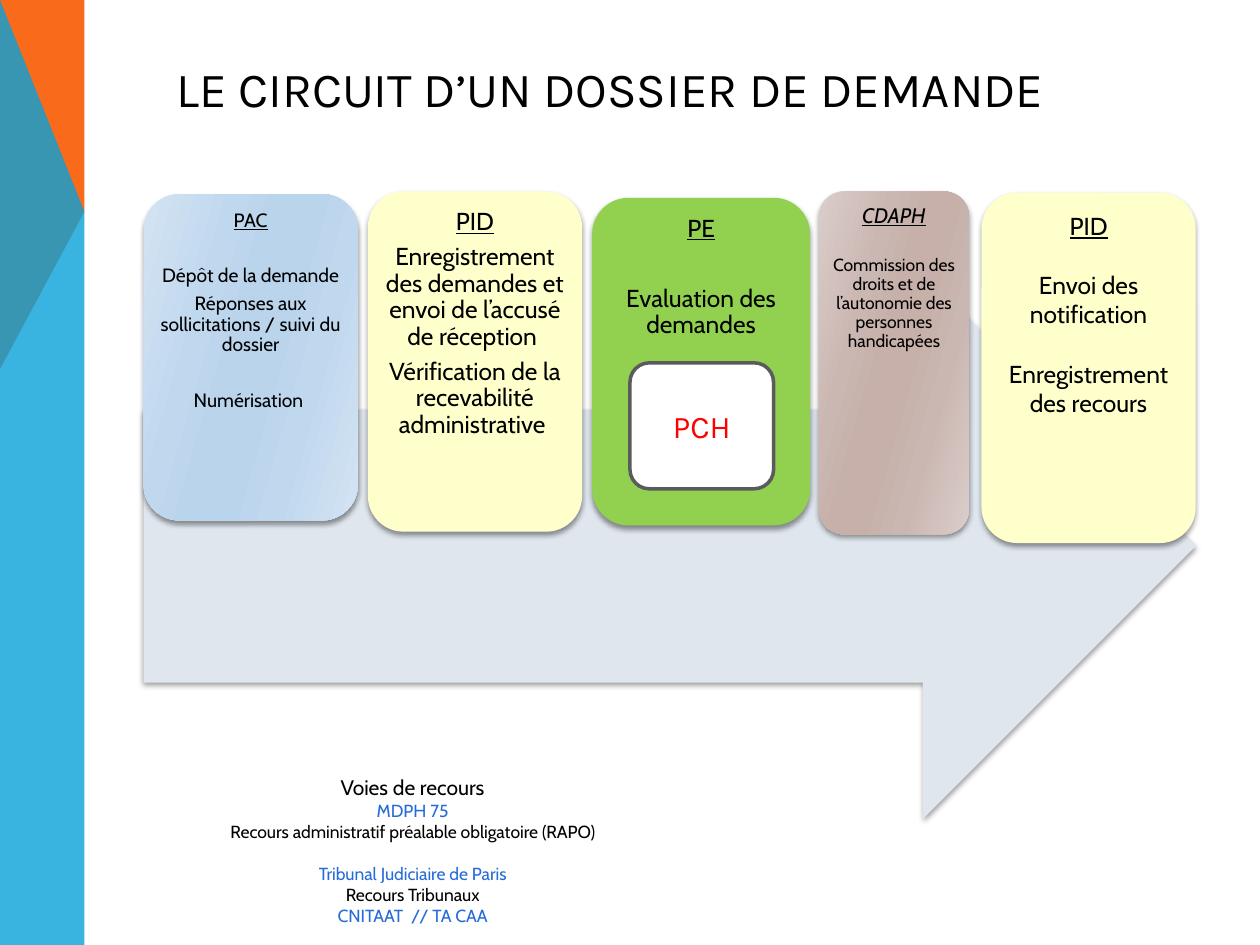
from lxml import etree
from pptx import Presentation
from pptx.dml.color import RGBColor
from pptx.enum.shapes import MSO_SHAPE
from pptx.enum.text import MSO_ANCHOR, PP_ALIGN
from pptx.oxml import parse_xml
from pptx.oxml.ns import nsdecls, qn
from pptx.util import Inches, Pt

ROUND, ARROW = MSO_SHAPE.ROUNDED_RECTANGLE, MSO_SHAPE.RIGHT_ARROW
TOP, MIDDLE = MSO_ANCHOR.TOP, MSO_ANCHOR.MIDDLE
LEFT, CENTER = PP_ALIGN.LEFT, PP_ALIGN.CENTER


class Theme:
    title_font, body_font = "Karla", "Cabin"
    title, badge, step, side, head, small = 28, 18, 14, 11, 12, 10
    black, white, red, link = "000000", "FFFFFF", "FF0000", "266BDA"
    orange, blue = "F96A1B", "08A1D9"
    arrow, yellow, green, grey = "DFE6ED", "FFFFCC", "92D050", "5A5B5D"
    # Gradients run from edge to middle and back
    pale_blue = ("D3E3F2", "C0D8EE", "BAD4EC")
    taupe = ("DACDCA", "CBB7B2", "C6B0A9")


def add_text(p, text, size=Theme.step, color=Theme.black, font=Theme.body_font,
             align=CENTER, underline=False, italic=False, before=0, after=0, spacing=1.0):
    """Put one formatted run in paragraph p."""
    p.alignment, p.line_spacing = align, spacing
    p.space_before, p.space_after = Pt(before), Pt(after)
    r = p.add_run()
    r.text = text
    r.font.name, r.font.size = font, Pt(size)
    r.font.color.rgb = RGBColor.from_string(color)
    r.font.underline, r.font.italic, r.font.bold = underline, italic, False


class SlideBuilder:
    def __init__(self, prs, theme):
        self.theme = theme
        self.s = prs.slides.add_slide(prs.slide_layouts[5])

    def title(self, text, x, y, w, h):
        sp = self.s.shapes.title
        sp.left, sp.top, sp.width, sp.height = map(Inches, (x, y, w, h))
        sp.text_frame.vertical_anchor = MIDDLE
        add_text(sp.text_frame.paragraphs[0], text, size=self.theme.title,
                 font=self.theme.title_font, align=LEFT)

    def polygon(self, points, color, alpha=100):
        points = [(Inches(x), Inches(y)) for x, y in points]
        fb = self.s.shapes.build_freeform(*points[0])
        fb.add_line_segments(points[1:], close=True)
        sp = fb.convert_to_shape()
        self.paint(sp, color)
        if alpha < 100:
            clr = sp._element.spPr.find(qn("a:solidFill"))[0]
            etree.SubElement(clr, qn("a:alpha")).set("val", str(alpha * 1000))

    def shape(self, kind, x, y, w, h, fill=None, shadow=False):
        sp = self.s.shapes.add_shape(kind, *map(Inches, (x, y, w, h)))
        self.paint(sp, fill)
        if shadow:
            self.drop_shadow(sp)
        return sp

    def paint(self, sp, fill):
        sp.shadow.inherit = False
        sp.line.fill.background()
        if fill is None:
            sp.fill.background()
        elif isinstance(fill, str):
            sp.fill.solid()
            sp.fill.fore_color.rgb = RGBColor.from_string(fill)
        else:
            self.gradient(sp, fill)

    def gradient(self, sp, colors):
        stops = zip((0, 30, 45, 55, 73, 100), colors + colors[::-1])
        gs = "".join(f'<a:gs pos="{pos * 1000}"><a:srgbClr val="{c}"/></a:gs>'
                     for pos, c in stops)
        xml = (f'<a:gradFill {nsdecls("a")} rotWithShape="1"><a:gsLst>{gs}</a:gsLst>'
               f'<a:lin ang="{16 * 60000}" scaled="0"/></a:gradFill>')
        sp._element.spPr.find(qn("a:prstGeom")).addnext(parse_xml(xml))

    def drop_shadow(self, sp):
        effects = sp._element.spPr.find(qn("a:effectLst"))
        effects.append(parse_xml(
            f'<a:outerShdw {nsdecls("a")} blurRad="{Pt(3)}" dist="{Pt(2)}" '
            f'dir="{90 * 60000}" rotWithShape="0"><a:srgbClr val="{self.theme.black}">'
            '<a:alpha val="40000"/></a:srgbClr></a:outerShdw>'))

    def fill_text(self, sp, lines, anchor=MIDDLE, inset=0.05, bottom=None, **style):
        """Fill sp with (text, format) lines; style applies to all of them."""
        tf = sp.text_frame
        tf.word_wrap, tf.vertical_anchor = True, anchor
        tf.margin_left = tf.margin_right = tf.margin_top = Inches(inset)
        tf.margin_bottom = Inches(inset if bottom is None else bottom)
        for i, (text, fmt) in enumerate(lines):
            p = tf.add_paragraph() if i else tf.paragraphs[0]
            add_text(p, text, **{**style, **fmt})

    def step(self, x, y, w, h, fill, size, lines, spacing=0.9, inset=0.06):
        """One stage of the circuit; the first line is its underlined heading."""
        sp = self.shape(ROUND, x, y, w, h, fill, shadow=True)
        (head, fmt), *rest = lines
        self.fill_text(sp, [(head, {"underline": True, **fmt}), *rest], anchor=TOP,
                       inset=inset, size=size, spacing=spacing,
                       after=size * 0.35 if spacing < 1 else 0)


def main():
    t = Theme
    prs = Presentation()
    prs.slide_width, prs.slide_height = Inches(10), Inches(7.5)
    b = SlideBuilder(prs, t)

    # Side band
    b.polygon([(0, 0), (0.67, 0), (0.67, 1.68), (0, 2.93)], t.orange)
    b.polygon([(0, 0), (0.67, 1.68), (0.67, 7.5), (0, 7.5)], t.blue, alpha=80)

    b.title("LE CIRCUIT D’UN DOSSIER DE DEMANDE", 1.3, 0.4, 8.07, 0.6)

    # Circuit: background arrow, then the five stages
    b.shape(ARROW, 1.14, 2.17, 8.35, 4.33, t.arrow, shadow=True)
    b.step(1.14, 1.54, 1.7, 2.59, t.pale_blue, t.side, [
        ("PAC", {}),
        ("Dépôt de la demande", {"before": 16}),
        ("Réponses aux sollicitations / suivi du dossier", {}),
        ("Numérisation ", {"before": 16})], inset=0.05)
    b.step(2.92, 1.52, 1.7, 2.7, t.yellow, t.step, [
        ("PID", {}),
        ("Enregistrement des demandes et envoi de l’accusé de réception ", {}),
        ("Vérification de la recevabilité administrative ", {})])
    b.step(4.7, 1.57, 1.73, 2.6, t.green, t.step, [
        ("PE", {}),
        ("Evaluation des demandes", {"before": 20})])
    b.step(6.5, 1.52, 1.19, 2.72, t.taupe, t.small, [
        ("CDAPH", {"size": t.head, "italic": True}),
        ("Commission des droits et de l’autonomie des personnes handicapées",
         {"before": 13})], inset=0.05)
    b.step(7.79, 1.53, 1.7, 2.78, t.yellow, t.step, [
        ("PID", {}),
        ("Envoi des notification", {"before": 17}),
        ("Enregistrement des recours", {"before": 17})], spacing=1.0)

    # Appeals
    appeals = b.shape(ROUND, 1.38, 6.19, 3.79, 1.26)
    b.fill_text(appeals, [
        ("Voies de recours", {"size": t.head}),
        ("MDPH 75", {"color": t.link}),
        ("Recours administratif préalable obligatoire (RAPO)", {}),
        ("Tribunal Judiciaire de Paris", {"color": t.link, "before": 12}),
        ("Recours Tribunaux", {}),
        ("CNITAAT  // TA CAA", {"color": t.link})], bottom=0.19, size=t.small)

    # Badge inside the evaluation stage
    badge = b.shape(ROUND, 5, 2.88, 1.14, 1, t.white)
    badge.adjustments[0] = 0.154
    badge.line.color.rgb = RGBColor.from_string(t.grey)
    badge.line.width = Pt(2)
    b.fill_text(badge, [("PCH", {})], size=t.badge, color=t.red, font=t.title_font)

    prs.save("out.pptx")


if __name__ == "__main__":
    main()
